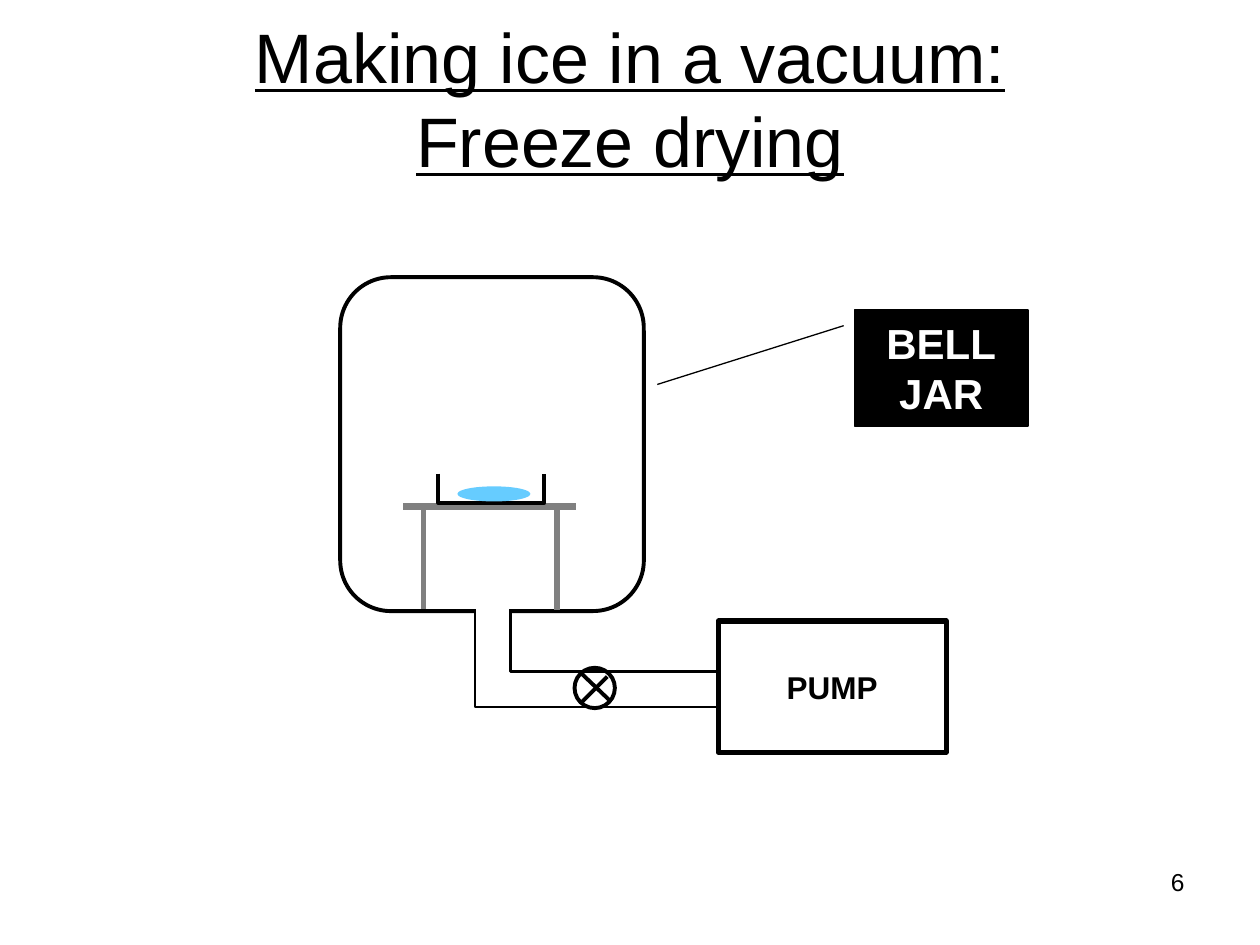
from dataclasses import dataclass
from typing import Optional

from lxml import etree
from pptx import Presentation
from pptx import util as u
from pptx.dml.color import RGBColor
from pptx.enum import shapes, text
from pptx.oxml import ns

BLACK = RGBColor(0x00, 0x00, 0x00)
WHITE = RGBColor(0xFF, 0xFF, 0xFF)
GRAY = RGBColor(0x80, 0x80, 0x80)
WATER = RGBColor(0x66, 0xCC, 0xFF)
SHAPE = shapes.MSO_SHAPE
ALIGN = text.PP_ALIGN


@dataclass
class Box:
    kind: SHAPE
    at: tuple
    fill: Optional[RGBColor] = None
    line: Optional[float] = None
    adj: tuple = ()
    label: str = ""
    size: int = 18
    color: RGBColor = BLACK


@dataclass
class Line:
    start: tuple
    end: tuple
    width: float
    color: RGBColor = BLACK


@dataclass
class Outline:
    points: list
    width: float


DIAGRAM = [
    Box(SHAPE.ROUNDED_RECTANGLE, (2.7, 2.2, 2.41, 2.65), line=2.25, adj=(0.167,)),
    Line((3.2, 4.02), (4.57, 4.02), 4.5, GRAY),
    Line((3.36, 4.02), (3.36, 4.83), 3, GRAY),
    Line((4.42, 4.04), (4.42, 4.84), 3, GRAY),
    Outline([(3.48, 3.76), (3.48, 3.99), (4.32, 3.99), (4.32, 3.76)], 2.25),
    Box(SHAPE.OVAL, (3.63, 3.86, 0.58, 0.12), fill=WATER),
    Outline([(4.05, 4.85), (4.05, 5.33), (5.77, 5.33)], 1.5),
    Outline([(3.77, 4.84), (3.77, 5.61), (5.81, 5.61)], 1.5),
    Line((3.78, 4.87), (4.04, 4.87), 6, WHITE),
    Box(SHAPE.OVAL, (4.56, 5.3, 0.32, 0.32), line=2.25),
    Line((4.62, 5.35), (4.85, 5.57), 2.25),
    Line((4.82, 5.37), (4.61, 5.58), 2.25),
    Box(SHAPE.RECTANGLE, (5.7, 4.93, 1.81, 1.04), WHITE, 3, label="PUMP"),
    Box(SHAPE.LINE_CALLOUT_1, (6.78, 2.46, 1.38, 0.92), BLACK, 0.75,
        (0.136, -0.061, 0.643, -1.133), "BELL\nJAR", 24, WHITE),
]


def inches(values: tuple) -> list:
    return [u.Inches(v) for v in values]


def write(tf, label: str, size: int, color=BLACK, align=ALIGN.CENTER,
          bold=False, underline=False) -> None:
    tf.text = label
    tf.word_wrap = True
    for p in tf.paragraphs:
        p.alignment = align
        for r in p.runs:
            r.font.name = "Arial"
            r.font.size = u.Pt(size)
            r.font.bold = bold
            r.font.underline = underline
            r.font.color.rgb = color


def style(sp, fill: Optional[RGBColor], line: Optional[float]) -> None:
    sp.shadow.inherit = False
    if fill is None:
        sp.fill.background()
    else:
        sp.fill.solid()
        sp.fill.fore_color.rgb = fill
    if line is None:
        sp.line.fill.background()
    else:
        sp.line.color.rgb = BLACK
        sp.line.width = u.Pt(line)


def draw_box(s, box: Box) -> None:
    sp = s.shapes.add_shape(box.kind, *inches(box.at))
    style(sp, box.fill, box.line)
    for i, value in enumerate(box.adj):
        sp.adjustments[i] = value
    if box.label:
        sp.text_frame.vertical_anchor = text.MSO_ANCHOR.MIDDLE
        write(sp.text_frame, box.label, box.size, box.color, bold=True)


def draw_line(s, line: Line) -> None:
    sp = s.shapes.add_connector(shapes.MSO_CONNECTOR.STRAIGHT,
                                *inches(line.start + line.end))
    sp.line.color.rgb = line.color
    sp.line.width = u.Pt(line.width)
    etree.SubElement(sp._element.spPr, ns.qn("a:effectLst"))


def draw_outline(s, outline: Outline) -> None:
    first, *rest = [inches(point) for point in outline.points]
    builder = s.shapes.build_freeform(*first)
    builder.add_line_segments(rest, close=False)
    style(builder.convert_to_shape(), None, outline.width)


DRAW = {Box: draw_box, Line: draw_line, Outline: draw_outline}


def main() -> None:
    prs = Presentation()
    prs.slide_width, prs.slide_height = u.Inches(10), u.Inches(7.5)
    s = prs.slides.add_slide(prs.slide_layouts[5])

    title = s.shapes.title
    title.left, title.top, title.width, title.height = inches((0, 0, 10, 1.54))
    title.text_frame.vertical_anchor = text.MSO_ANCHOR.MIDDLE
    write(title.text_frame, "Making ice in a vacuum:\vFreeze drying", 40,
          underline=True)

    number = s.shapes.add_textbox(*inches((7.17, 6.83, 2.33, 0.52)))
    write(number.text_frame, "6", 14, align=ALIGN.RIGHT)

    for item in DIAGRAM:
        DRAW[type(item)](s, item)

    prs.save("out.pptx")


if __name__ == "__main__":
    main()
